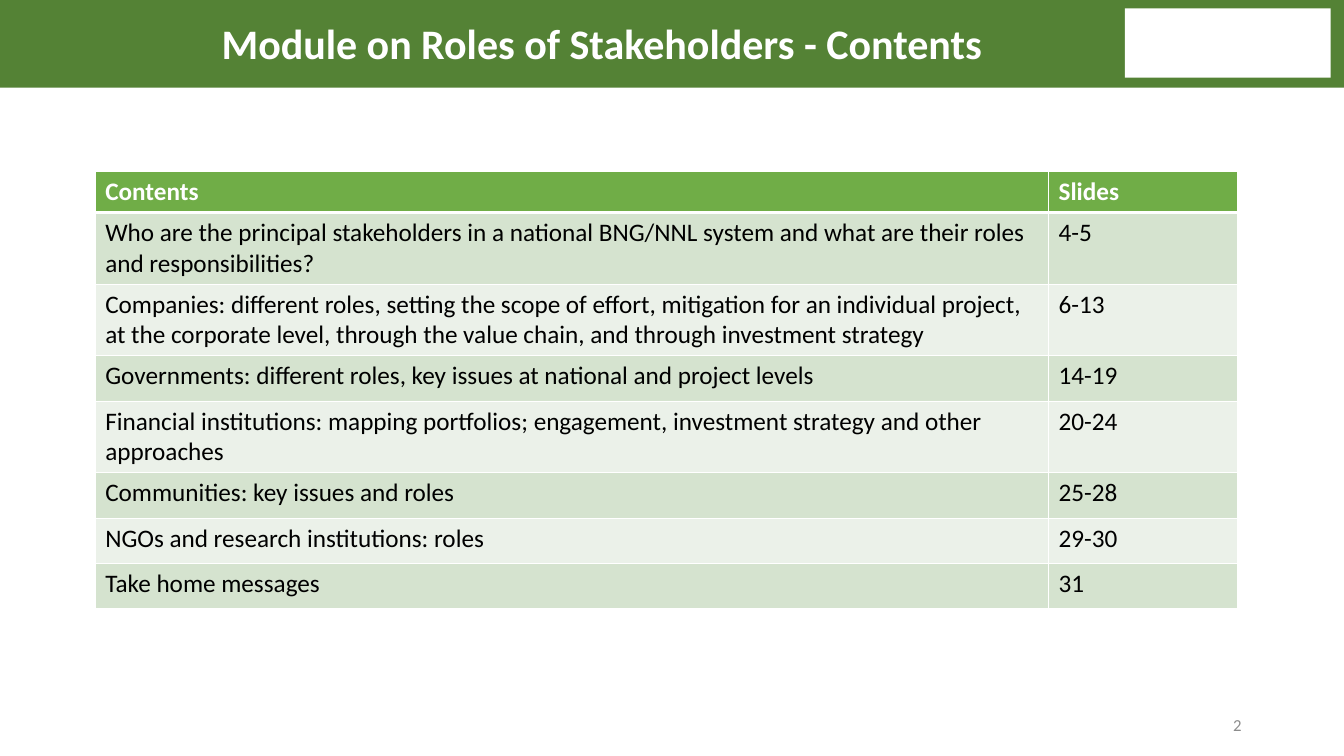
from dataclasses import dataclass

from lxml import etree
from pptx import Presentation
from pptx.dml.color import RGBColor
from pptx.enum import shapes, text
from pptx.oxml import ns
from pptx.util import Pt


@dataclass(frozen=True)
class Theme:
    font: str = "Calibri"
    title_size: float = 30
    body_size: float = 18
    number_size: float = 12
    band: str = "548235"
    header: str = "70AD47"
    row_fills: tuple = ("D5E3CF", "EBF1E9")
    white: str = "FFFFFF"
    black: str = "000000"
    grey: str = "8C8C8C"


THEME = Theme()
LEFT, CENTER, RIGHT = text.PP_ALIGN.LEFT, text.PP_ALIGN.CENTER, text.PP_ALIGN.RIGHT
HEADER_HEIGHT, ONE_LINE, TWO_LINES = 29, 32.4, 51

CONTENTS = [
    ("Contents", "Slides", HEADER_HEIGHT),
    ("Who are the principal stakeholders in a national BNG/NNL system and what are "
     "their roles and responsibilities?", "4-5", TWO_LINES),
    ("Companies: different roles, setting the scope of effort, mitigation for an "
     "individual project, at the corporate level, through the value chain, and through "
     "investment strategy", "6-13", TWO_LINES),
    ("Governments: different roles, key issues at national and project levels",
     "14-19", ONE_LINE),
    ("Financial institutions: mapping portfolios; engagement, investment strategy and "
     "other approaches", "20-24", TWO_LINES),
    ("Communities: key issues and roles", "25-28", ONE_LINE),
    ("NGOs and research institutions: roles", "29-30", ONE_LINE),
    ("Take home messages", "31", ONE_LINE),
]


def write(frame, words, size=THEME.body_size, color=THEME.black, bold=False,
          align=LEFT, spacing=1.0):
    frame.word_wrap = True
    paragraph = frame.paragraphs[0]
    paragraph.alignment = align
    paragraph.line_spacing = spacing
    run = paragraph.add_run()
    run.text = words
    run.font.name = THEME.font
    run.font.size = Pt(size)
    run.font.bold = bold
    run.font.color.rgb = RGBColor.from_string(color)


def add_rectangle(slide, left, top, width, height, color):
    shape = slide.shapes.add_shape(shapes.MSO_SHAPE.RECTANGLE,
                                   Pt(left), Pt(top), Pt(width), Pt(height))
    shape.shadow.inherit = False
    shape.fill.solid()
    shape.fill.fore_color.rgb = RGBColor.from_string(color)
    shape.line.fill.background()


def add_title(slide, words):
    title = slide.shapes.title
    title.left, title.top, title.width, title.height = Pt(57.6), Pt(0), Pt(745), Pt(65)
    # Bring the title in front of the band
    title.element.getparent().append(title.element)
    title.text_frame.vertical_anchor = text.MSO_ANCHOR.MIDDLE
    write(title.text_frame, words, size=THEME.title_size, color=THEME.white,
          bold=True, align=CENTER, spacing=0.9)


def add_slide_number(slide, number):
    box = slide.shapes.add_textbox(Pt(831), Pt(507), Pt(63), Pt(22))
    box.text_frame.vertical_anchor = text.MSO_ANCHOR.MIDDLE
    write(box.text_frame, number, size=THEME.number_size, color=THEME.grey, align=RIGHT)


def set_borders(cell, **widths):
    """Draw white borders; widths are points by side: L, R, T, B."""
    properties = cell._tc.get_or_add_tcPr()
    for position, (side, width) in enumerate(widths.items()):
        line = etree.Element(ns.qn(f"a:ln{side}"), w=str(Pt(width)))
        fill = etree.SubElement(line, ns.qn("a:solidFill"))
        etree.SubElement(fill, ns.qn("a:srgbClr"), val=THEME.white)
        properties.insert(position, line)


def add_contents_table(slide, rows, left, top, widths):
    heights = [height for *_, height in rows]
    table = slide.shapes.add_table(len(rows), len(widths), Pt(left), Pt(top),
                                   Pt(sum(widths)), Pt(sum(heights))).table
    for column, width in zip(table.columns, widths):
        column.width = Pt(width)
    for index, (*labels, height) in enumerate(rows):
        table.rows[index].height = Pt(height)
        is_header = index == 0
        fill = THEME.header if is_header else THEME.row_fills[(index - 1) % 2]
        for column, label in enumerate(labels):
            cell = table.cell(index, column)
            cell.fill.solid()
            cell.fill.fore_color.rgb = RGBColor.from_string(fill)
            set_borders(cell, L=1, R=1, T=3 if index == 1 else 1, B=3 if is_header else 1)
            write(cell.text_frame, label, bold=is_header,
                  color=THEME.white if is_header else THEME.black)


def main():
    presentation = Presentation()
    presentation.slide_width, presentation.slide_height = Pt(960), Pt(540)
    slide = presentation.slides.add_slide(
        presentation.slide_layouts.get_by_name("Title Only"))
    add_rectangle(slide, 0, -2, 960, 64.6, THEME.band)
    add_rectangle(slide, 803.5, 6, 147, 49.5, THEME.white)
    add_title(slide, "Module on Roles of Stakeholders - Contents")
    add_contents_table(slide, CONTENTS, left=68, top=122.6, widths=(681, 135))
    add_slide_number(slide, "2")
    presentation.save("out.pptx")


if __name__ == "__main__":
    main()
